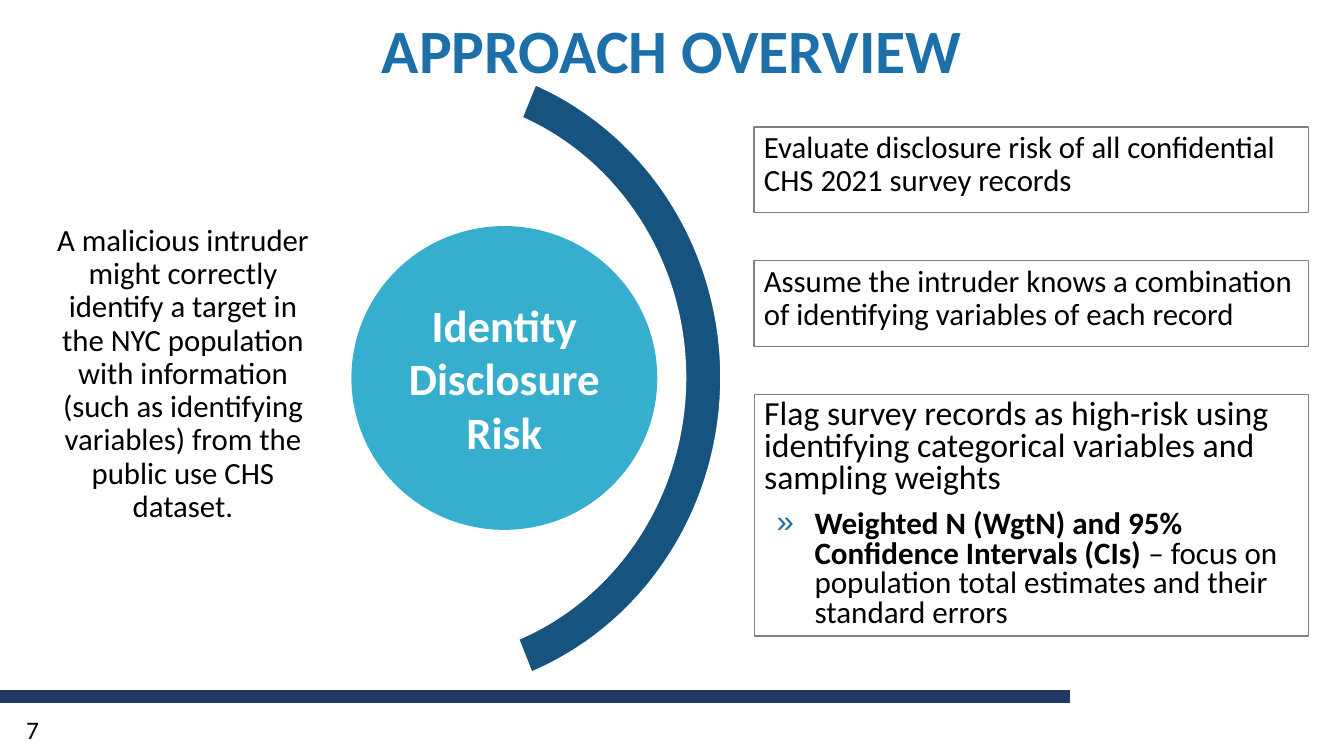
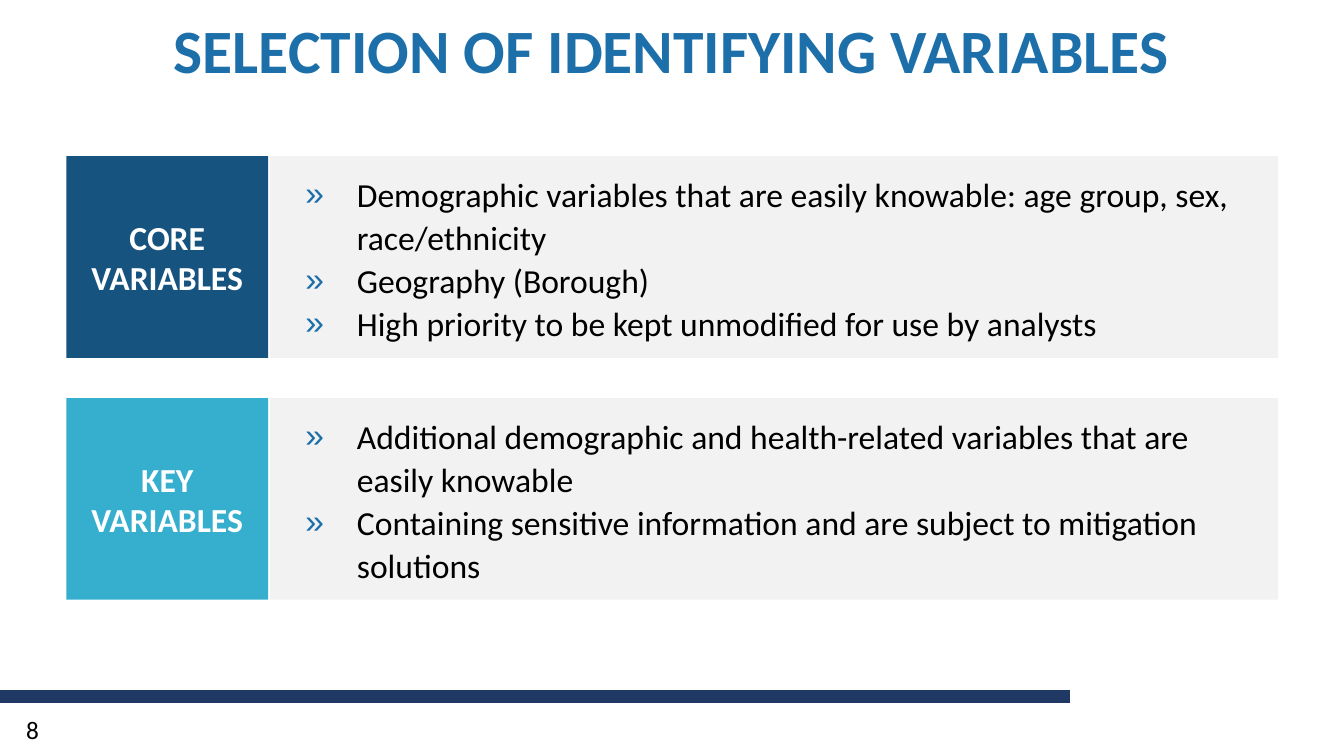
"""Build two slides on identity disclosure risk and identifying variables."""
from dataclasses import dataclass

from lxml.etree import SubElement
from pptx import Presentation
from pptx.dml.color import RGBColor as Rgb
from pptx.enum.shapes import MSO_CONNECTOR as Link, MSO_SHAPE as Kind
from pptx.enum.text import MSO_ANCHOR as Anchor, MSO_AUTO_SIZE as Fit, PP_ALIGN as Align
from pptx.oxml.ns import qn
from pptx.presentation import Presentation as Deck
from pptx.shapes.autoshape import Shape
from pptx.slide import Slide
from pptx.util import Pt


@dataclass(frozen=True)
class Theme:
    font: str = "Calibri"
    black: str = "000000"
    white: str = "FFFFFF"
    blue: str = "1D6FA9"
    navy: str = "1F3864"
    deep: str = "16537F"
    aqua: str = "36AFCE"
    pale: str = "F2F2F2"
    gray: str = "808080"
    title: float = 44
    hero: float = 32
    label: float = 24
    lead: float = 24.1
    detail: float = 22.2
    body: float = 22
    page: float = 18


THEME = Theme()
WIDTH, HEIGHT = 960, 540


@dataclass(frozen=True)
class Box:
    left: float
    top: float
    width: float
    height: float


@dataclass(frozen=True)
class Run:
    text: str
    bold: bool = False


@dataclass(frozen=True)
class Para:
    runs: tuple[Run, ...]
    size: float
    color: str = THEME.black
    align: Align = Align.LEFT
    lines: float = 1.0
    before: float = 0
    indent: float = 0
    hang: float = 0


@dataclass(frozen=True)
class Group:
    name: str
    color: str
    items: tuple[str, ...]


GROUPS = (
    Group("CORE VARIABLES", THEME.deep, (
        "Demographic variables that are easily knowable: age group, sex, race/ethnicity",
        "Geography (Borough)",
        "High priority to be kept unmodified for use by analysts",
    )),
    Group("KEY VARIABLES", THEME.aqua, (
        "Additional demographic and health-related variables that are easily knowable",
        "Containing sensitive information and are subject to mitigation solutions",
    )),
)
STEPS = (
    "Evaluate disclosure risk of all confidential CHS 2021 survey records",
    "Assume the intruder knows a combination of identifying variables of each record",
)


def place(shape: Shape, box: Box) -> None:
    """Move and size a shape."""
    shape.left, shape.top = Pt(box.left), Pt(box.top)
    shape.width, shape.height = Pt(box.width), Pt(box.height)


def paint(shape: Shape, fill: str = "", line: str = "", weight: float = 1) -> None:
    """Set the fill and outline, leaving out those not given."""
    if fill:
        shape.fill.solid()
        shape.fill.fore_color.rgb = Rgb.from_string(fill)
    else:
        shape.fill.background()
    if line:
        shape.line.color.rgb = Rgb.from_string(line)
        shape.line.width = Pt(weight)
    else:
        shape.line.fill.background()


def write(shape: Shape, paras: list[Para], anchor: Anchor = Anchor.TOP) -> None:
    """Fill a shape with formatted paragraphs."""
    frame = shape.text_frame
    frame.word_wrap = True
    frame.auto_size = Fit.NONE
    frame.vertical_anchor = anchor
    for rank, para in enumerate(paras):
        block = frame.add_paragraph() if rank else frame.paragraphs[0]
        props = block._p.get_or_add_pPr()
        props.set("marL", str(Pt(para.indent)))
        props.set("indent", str(-Pt(para.hang)))
        if para.hang:
            tint = SubElement(props, qn("a:buClr"))
            SubElement(tint, qn("a:srgbClr")).set("val", THEME.blue)
            SubElement(props, qn("a:buChar")).set("char", "»")
        else:
            SubElement(props, qn("a:buNone"))
        block.alignment = para.align
        block.line_spacing = para.lines
        block.space_before = Pt(para.before)
        block.space_after = Pt(0)
        for part in para.runs:
            run = block.add_run()
            run.text = part.text
            run.font.name = THEME.font
            run.font.size = Pt(para.size)
            run.font.bold = part.bold
            run.font.color.rgb = Rgb.from_string(para.color)


def draw(slide: Slide, kind: Kind, box: Box, fill: str = "", line: str = "",
         weight: float = 1) -> Shape:
    """Add a flat preset shape."""
    shape = slide.shapes.add_shape(kind, *(Pt(n) for n in (box.left, box.top, box.width, box.height)))
    shape.shadow.inherit = False
    paint(shape, fill, line, weight)
    return shape


def center(text: str, size: float, color: str) -> Para:
    """Make a bold centred paragraph."""
    return Para((Run(text, True),), size, color, Align.CENTER)


def add_bar(deck: Deck, slide: Slide) -> None:
    """Put the footer bar on the master."""
    bar = slide.shapes.add_connector(Link.STRAIGHT, Pt(764.6), Pt(497.5), Pt(0), Pt(497.5))
    bar.line.color.rgb = Rgb.from_string(THEME.navy)
    bar.line.width = Pt(9.75)
    SubElement(bar._element.spPr, qn("a:effectLst"))
    bar._element.nvCxnSpPr.cNvPr.set("id", "99")
    deck.slide_master.shapes._spTree.append(bar._element)


def add_slide(deck: Deck, title: str, page: int) -> Slide:
    """Add a slide with its title and page number."""
    slide = deck.slides.add_slide(deck.slide_layouts[3])
    head = slide.shapes.title
    place(head, Box(0, 2, WIDTH, 72))
    para = Para((Run(title, True),), THEME.title, THEME.blue, Align.CENTER, 0.9)
    write(head, [para], Anchor.MIDDLE)
    foot = slide.shapes.add_textbox(Pt(11.5), Pt(507), Pt(37.5), Pt(29))
    write(foot, [Para((Run(str(page)),), THEME.page)])
    return slide


def fill_risk(slide: Slide) -> None:
    """Draw the risk circle, its arc and the three steps."""
    threat, flag = slide.placeholders[1], slide.placeholders[2]
    place(threat, Box(31.7, 157, 198, 226))
    write(threat, [Para((Run(
        "A malicious intruder might correctly identify a target in the NYC population "
        "with information (such as identifying variables) from the public use CHS dataset."),),
        THEME.body, align=Align.CENTER, lines=0.9)])

    disc = draw(slide, Kind.FLOWCHART_CONNECTOR, Box(251.5, 162, 217.5, 216), THEME.aqua, THEME.aqua)
    write(disc, [center(text, THEME.hero, THEME.white) for text in ("Identity Disclosure", "Risk")],
          Anchor.MIDDLE)

    arc = draw(slide, Kind.BLOCK_ARC, Box(80, 42.5, 435, 454.5), THEME.deep, THEME.white)
    for rank, value in enumerate((292.13 * 0.6, 68.65 * 0.6, 0.058)):
        arc.adjustments[rank] = value

    left, top, width, height, pitch = 538.6, 90.7, 396, 61.2, 95.4
    for rank, text in enumerate(STEPS):
        step = draw(slide, Kind.RECTANGLE, Box(left, top + rank * pitch, width, height),
                    line=THEME.gray, weight=0.75)
        write(step, [Para((Run(text),), THEME.body, lines=0.9)])

    place(flag, Box(left, top + len(STEPS) * pitch, width, 172.8))
    paint(flag, line=THEME.gray, weight=0.75)
    write(flag, [
        Para((Run("Flag survey records as high-risk using identifying categorical "
                  "variables and sampling weights"),), THEME.lead, lines=0.8),
        Para((Run("Weighted N (WgtN) and 95% Confidence Intervals (CIs) ", True),
              Run("– focus on population total estimates and their standard errors")),
             THEME.detail, lines=0.8, before=10, indent=36, hang=27),
    ])


def fill_groups(slide: Slide) -> None:
    """Draw one label and one list for each group of variables."""
    left, top, side, gap, pitch = 47.5, 111.6, 144, 1.5, 172.8
    for rank, group in enumerate(GROUPS):
        row = top + rank * pitch
        label = draw(slide, Kind.RECTANGLE, Box(left, row, side, side), group.color)
        write(label, [center(group.name, THEME.label, THEME.white)], Anchor.MIDDLE)
        panel = slide.placeholders[rank + 1]
        place(panel, Box(left + side + gap, row, 720, side))
        paint(panel, THEME.pale)
        write(panel, [Para((Run(item),), THEME.label, lines=1.07, indent=54.7, hang=36.7)
                      for item in group.items], Anchor.MIDDLE)


def main() -> None:
    """Build and save the deck."""
    deck = Presentation()
    deck.slide_width, deck.slide_height = Pt(WIDTH), Pt(HEIGHT)
    risk = add_slide(deck, "APPROACH OVERVIEW", 7)
    add_bar(deck, risk)
    fill_risk(risk)
    fill_groups(add_slide(deck, "SELECTION OF IDENTIFYING VARIABLES", 8))
    deck.save("out.pptx")


if __name__ == "__main__":
    main()
